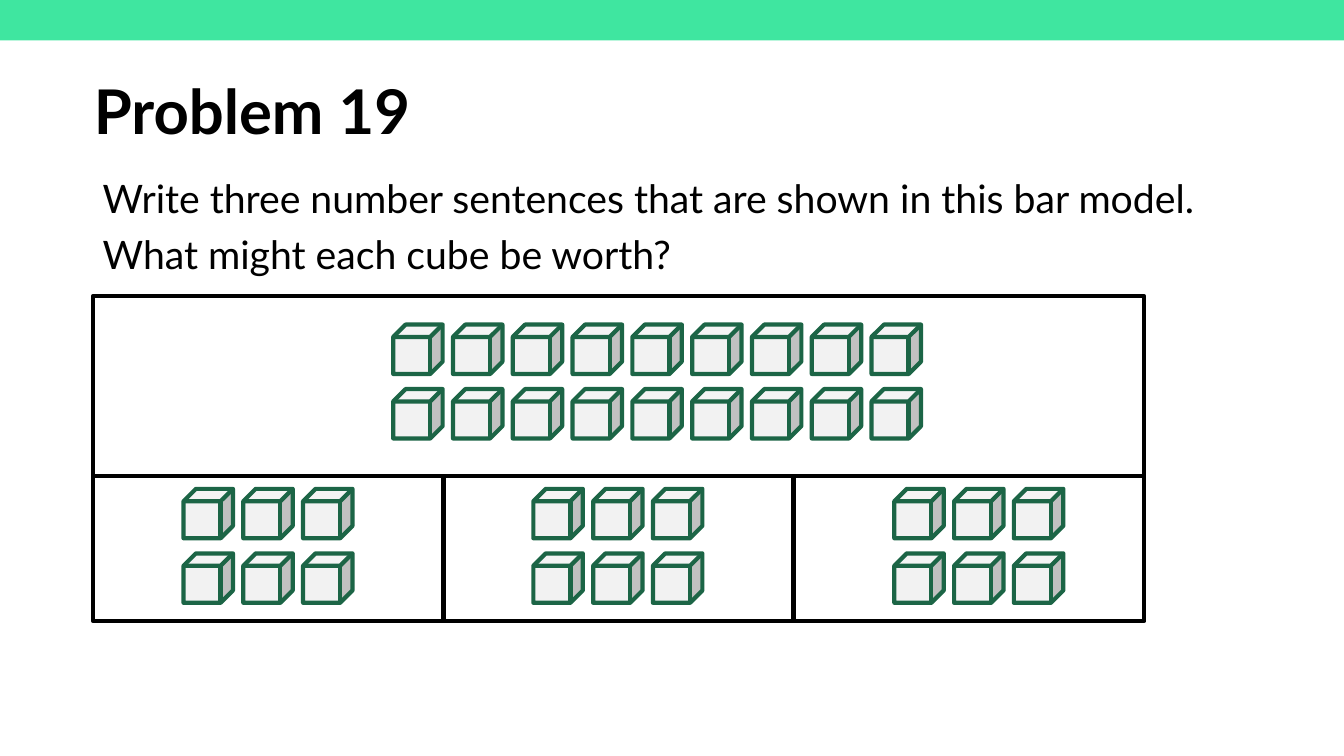
from typing import NamedTuple

from pptx import Presentation
from pptx.dml.color import RGBColor
from pptx.enum import shapes, text
from pptx.util import Inches, Pt

HUES = {"band": "3FE6A0", "ink": "000000", "face": "F2F2F2", "edge": "1C6546"}
FONT = "Lato"
SIDE, STEP, DROP = 0.49, 0.593, 0.64


class Part(NamedTuple):
    """One bar of the model and the two rows of cubes inside it."""
    left: float
    top: float
    width: float
    height: float
    cols: int
    cube_x: float
    cube_y: float


PARTS = [
    Part(0.92, 2.94, 10.43, 1.78, 9, 3.9, 3.22),
    Part(0.92, 4.72, 3.48, 1.44, 3, 1.82, 4.85),
    Part(4.39, 4.72, 3.48, 1.44, 3, 5.29, 4.85),
    Part(7.87, 4.72, 3.48, 1.44, 3, 8.87, 4.85),
]


def paint(slide, kind, box: tuple, fill: str = "", line: str = "") -> None:
    """Draw a preset shape with an optional fill and outline."""
    shape = slide.shapes.add_shape(kind, *map(Inches, box))
    shape.shadow.inherit = False
    if fill:
        shape.fill.solid()
        shape.fill.fore_color.rgb = RGBColor.from_string(HUES[fill])
    else:
        shape.fill.background()
    if line:
        shape.line.color.rgb = RGBColor.from_string(HUES[line])
        shape.line.width = Pt(3)
    else:
        shape.line.fill.background()


def write(shape, words: str, box: tuple, size: int, bold: bool = False,
          anchor=text.MSO_ANCHOR.TOP, gap: int = 0) -> None:
    """Place a text shape and format each line as a paragraph."""
    shape.left, shape.top, shape.width, shape.height = map(Inches, box)
    frame = shape.text_frame
    frame.word_wrap = True
    frame.auto_size = text.MSO_AUTO_SIZE.NONE
    frame.vertical_anchor = anchor
    frame.text = words
    for i, para in enumerate(frame.paragraphs):
        para.alignment = text.PP_ALIGN.LEFT
        para.line_spacing = 0.9
        para.space_before = Pt(gap if i else 0)
        for run in para.runs:
            run.font.name, run.font.size, run.font.bold = FONT, Pt(size), bold
            run.font.color.rgb = RGBColor.from_string(HUES["ink"])


def fill_bar(slide, part: Part) -> None:
    """Draw the cubes of one bar."""
    for row in range(2):
        for col in range(part.cols):
            spot = (part.cube_x + col * STEP, part.cube_y + row * DROP, SIDE, SIDE)
            paint(slide, shapes.MSO_SHAPE.CUBE, spot, fill="face", line="edge")


def main() -> None:
    """Build the slide and save it."""
    deck = Presentation()
    deck.slide_width, deck.slide_height = Inches(13.33), Inches(7.5)
    slide = deck.slides.add_slide(deck.slide_layouts[5])
    paint(slide, shapes.MSO_SHAPE.RECTANGLE, (0, -0.02, 13.33, 0.42), fill="band")
    write(slide.shapes.title, "Problem 19", (0.83, 0.41, 11.5, 1.45), 44,
          bold=True, anchor=text.MSO_ANCHOR.MIDDLE)
    box = (0.92, 1.73, 11.5, 4.76)
    task = slide.shapes.add_textbox(*map(Inches, box))
    write(task, "Write three number sentences that are shown in this bar model.\n"
          "What might each cube be worth?", box, 28, gap=10)
    for part in PARTS:
        paint(slide, shapes.MSO_SHAPE.RECTANGLE, part[:4], line="ink")
    for part in PARTS:
        fill_bar(slide, part)
    deck.save("out.pptx")


if __name__ == "__main__":
    main()
